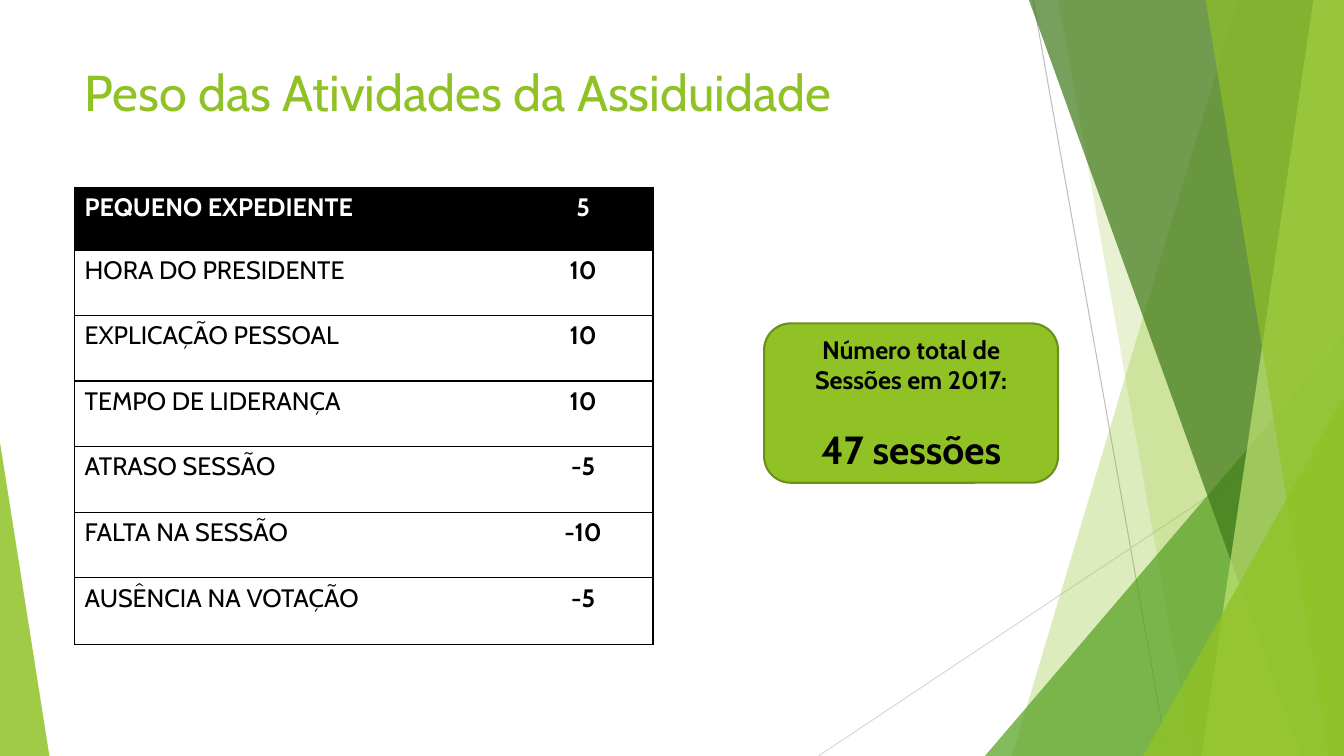
import pptx
import pptx.util
import pptx.dml.color
import pptx.enum.shapes
import pptx.enum.text
import pptx.oxml
import pptx.oxml.ns
import lxml.etree

Pt = pptx.util.Pt
Kind = pptx.enum.shapes.MSO_SHAPE
Align = pptx.enum.text.PP_ALIGN
Anchor = pptx.enum.text.MSO_ANCHOR
qn = pptx.oxml.ns.qn

FONT = "Cabin"
LIME = "90C226"
BLACK = "000000"
ROWS = [
    ("PEQUENO EXPEDIENTE", "5"),
    ("HORA DO PRESIDENTE", "10"),
    ("EXPLICAÇÃO PESSOAL", "10"),
    ("TEMPO DE LIDERANÇA", "10"),
    ("ATRASO SESSÃO", "-5"),
    ("FALTA NA SESSÃO", "-10"),
    ("AUSÊNCIA NA VOTAÇÃO", "-5"),
]


def color(code):
    return pptx.dml.color.RGBColor.from_string(code)


def style(para, size, code, bold=False, align=Align.LEFT):
    para.alignment = align
    for run in para.runs:
        run.font.name = FONT
        run.font.size = Pt(size)
        run.font.bold = bold
        run.font.color.rgb = color(code)


def paint(shape, code, alpha):
    shape.shadow.inherit = False
    shape.line.fill.background()
    shape.fill.solid()
    shape.fill.fore_color.rgb = color(code)
    tint = shape.fill._xPr.find(qn("a:solidFill"))[0]
    lxml.etree.SubElement(tint, qn("a:alpha"), val=str(alpha * 1000))


def add_line(slide, start, end, code):
    line = slide.shapes.add_connector(
        pptx.enum.shapes.MSO_CONNECTOR.STRAIGHT,
        Pt(start[0]), Pt(start[1]), Pt(end[0]), Pt(end[1]))
    line.line.color.rgb = color(code)
    line.line.width = Pt(0.75)
    lxml.etree.SubElement(line._element.spPr, qn("a:effectLst"))


def add_wedge(slide, x, y, w, h, tip, code, alpha):
    wedge = slide.shapes.add_shape(Kind.ISOSCELES_TRIANGLE, Pt(x), Pt(y), Pt(w), Pt(h))
    wedge.adjustments[0] = tip
    paint(wedge, code, alpha)


def add_facet(slide, x, y, w, h, top, base, code, alpha):
    form = slide.shapes.build_freeform(Pt(x + top), Pt(y))
    form.add_line_segments([
        (Pt(x + w), Pt(y)), (Pt(x + w), Pt(y + h)), (Pt(x + base), Pt(y + h))])
    paint(form.convert_to_shape(), code, alpha)


def add_decor(slide, x, y, w, h):
    add_line(slide, (x + 158, y), (x + 254, y + h), "BFBFBF")
    add_line(slide, (x + w, y + 290), (x + 4.6, y + h), "D9D9D9")

    def corner(wide, tall, code, alpha):
        add_wedge(slide, x + w - wide, y + h - tall, wide, tall, 1, code, alpha)

    def facet(top, base, code, alpha):
        add_facet(slide, x, y, w, h, top, base, code, alpha)

    facet(304.2, 142.9, LIME, 30)
    facet(176, 271.8, LIME, 20)
    corner(256.5, 300, "54A021", 72)
    facet(155, 349.5, "3F7819", 70)
    facet(358.2, 278.2, "C0E474", 70)
    facet(281.2, 369, LIME, 65)
    corner(143.5, 257, LIME, 80)


def add_title(slide, x, y, w, h):
    frame = slide.shapes.add_textbox(Pt(x), Pt(y), Pt(w), Pt(h)).text_frame
    frame.word_wrap = True
    frame.text = "Peso das Atividades da Assiduidade"
    style(frame.paragraphs[0], 36, LIME)


def edge(cell, side, shown):
    line = lxml.etree.SubElement(
        cell._tc.get_or_add_tcPr(), qn("a:ln" + side), w=str(Pt(1)))
    if shown:
        fill = lxml.etree.SubElement(line, qn("a:solidFill"))
        lxml.etree.SubElement(fill, qn("a:srgbClr"), val=BLACK)
    else:
        lxml.etree.SubElement(line, qn("a:noFill"))


def add_grid(slide, x, y, w, h):
    table = slide.shapes.add_table(len(ROWS), 2, Pt(x), Pt(y), Pt(w), Pt(h)).table
    table.horz_banding = False
    table.columns[0].width = Pt(w - 100)
    table.columns[1].width = Pt(100)
    tall = 46.8
    first = 44.6
    last = h - first - tall * (len(ROWS) - 2)
    sizes = [first] + [tall] * (len(ROWS) - 2) + [last]
    for r, (pair, size) in enumerate(zip(ROWS, sizes)):
        table.rows[r].height = Pt(size)
        for c, text in enumerate(pair):
            cell = table.cell(r, c)
            for side, shown in (("L", c == 0), ("R", c == 1), ("T", True), ("B", True)):
                edge(cell, side, shown)
            if r == 0:
                cell.fill.solid()
                cell.fill.fore_color.rgb = color(BLACK)
            else:
                cell.fill.background()
            cell.text_frame.text = text
            style(cell.text_frame.paragraphs[0], 18,
                  "FFFFFF" if r == 0 else BLACK, r == 0 or c == 1,
                  Align.CENTER if c else Align.LEFT)


def add_badge(slide, x, y, w, h):
    badge = slide.shapes.add_shape(Kind.ROUNDED_RECTANGLE, Pt(x), Pt(y), Pt(w), Pt(h))
    badge.shadow.inherit = False
    badge.fill.solid()
    badge.fill.fore_color.rgb = color(LIME)
    badge.line.color.rgb = color("6B901C")
    badge.line.width = Pt(1.5)
    frame = badge.text_frame
    frame.word_wrap = True
    frame.vertical_anchor = Anchor.MIDDLE
    frame.text = "Número total de Sessões em 2017:"
    total = frame.add_paragraph()
    total.text = "47 sessões"
    total.space_before = Pt(22)
    style(frame.paragraphs[0], 18, BLACK, True, Align.CENTER)
    style(total, 28, BLACK, True, Align.CENTER)


def main():
    deck = pptx.Presentation()
    deck.slide_width = Pt(960)
    deck.slide_height = Pt(540)
    slide = deck.slides.add_slide(deck.slide_layouts[6])
    add_decor(slide, 580, 0, 380, 540)
    add_wedge(slide, 0, 316, 35.3, 224, 0, LIME, 85)
    add_title(slide, 53.3, 40.3, 676.8, 77.8)
    add_grid(slide, 53.3, 134, 413.2, 326.2)
    add_badge(slide, 545.8, 231, 210, 113.8)
    deck.save("out.pptx")


if __name__ == "__main__":
    main()
